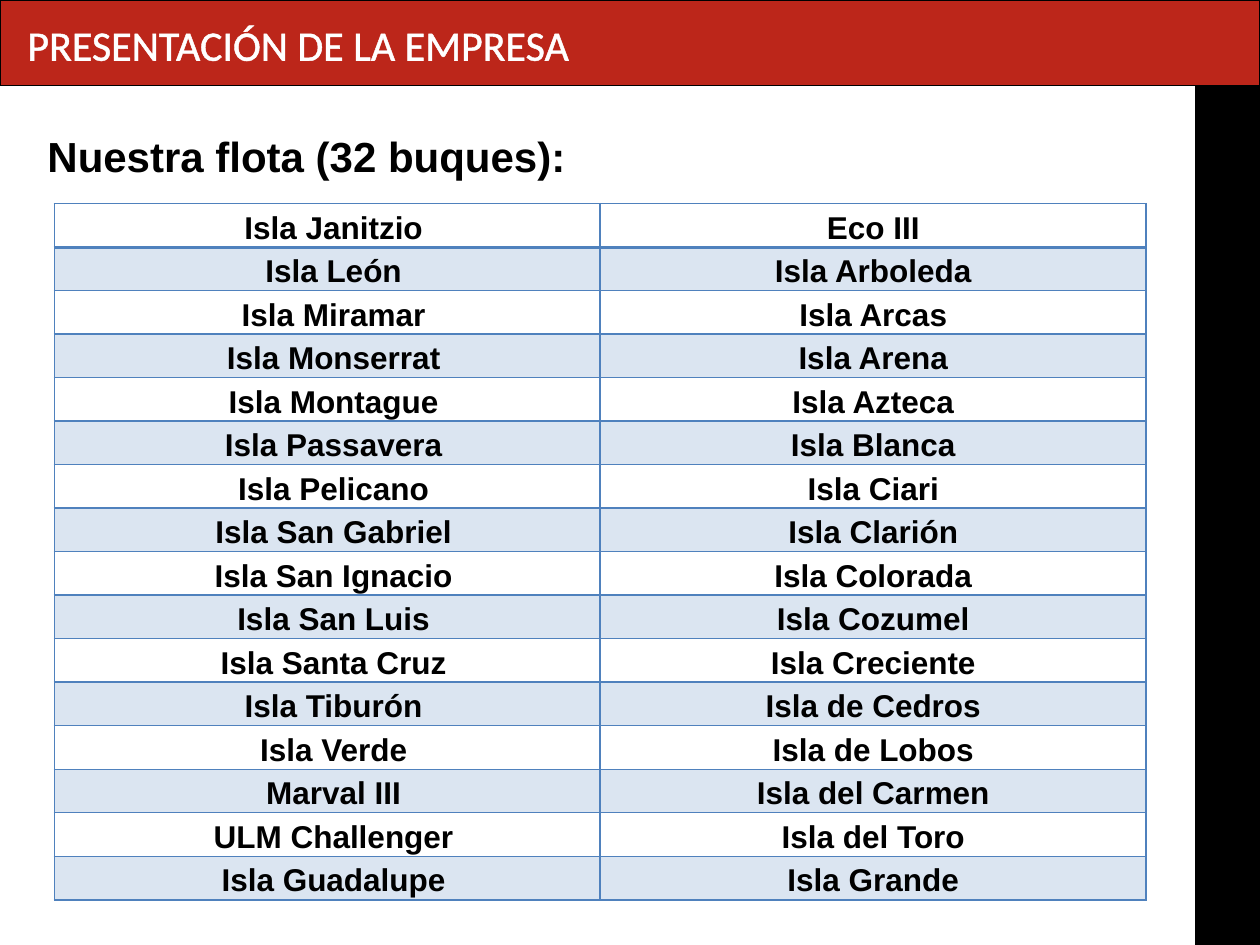
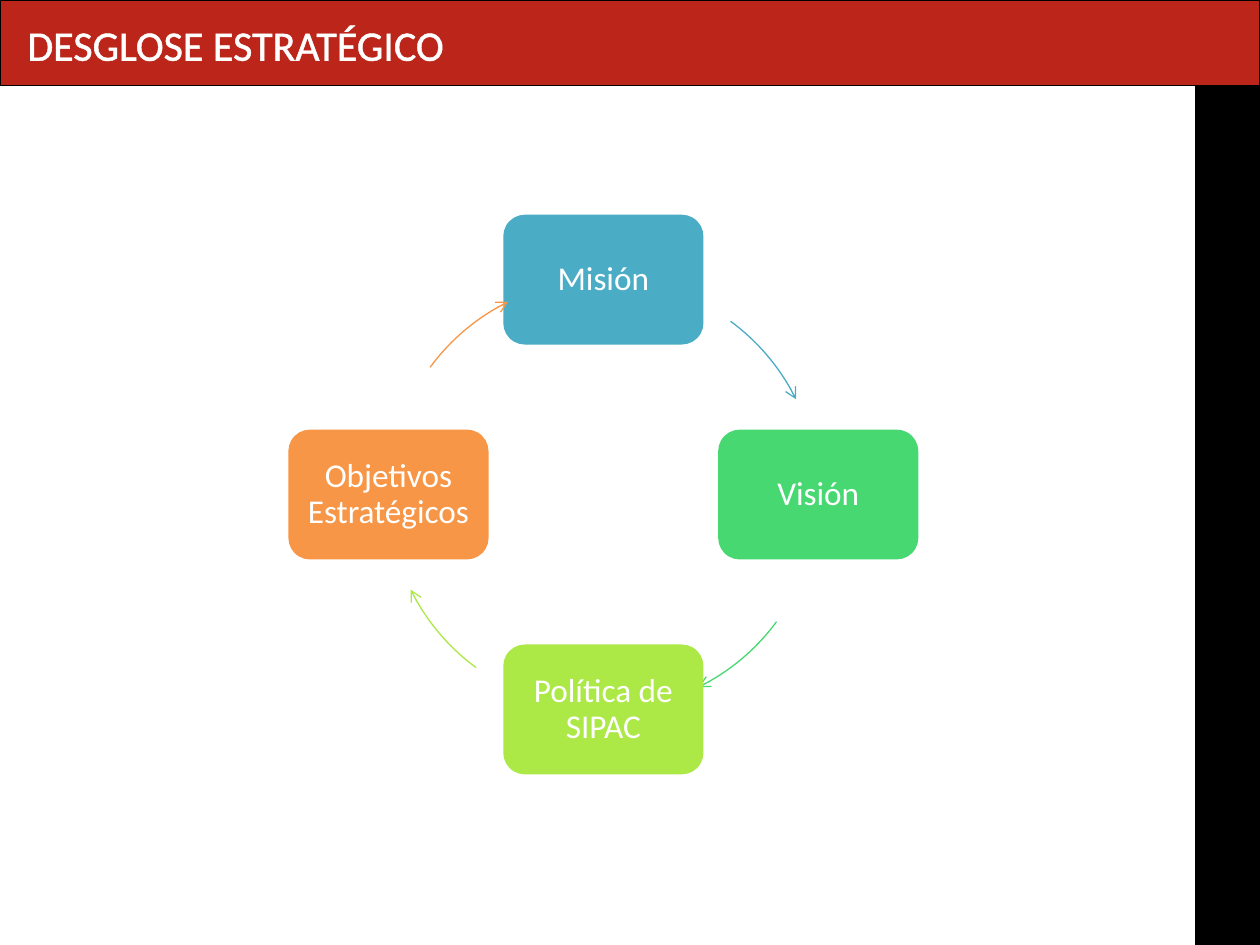
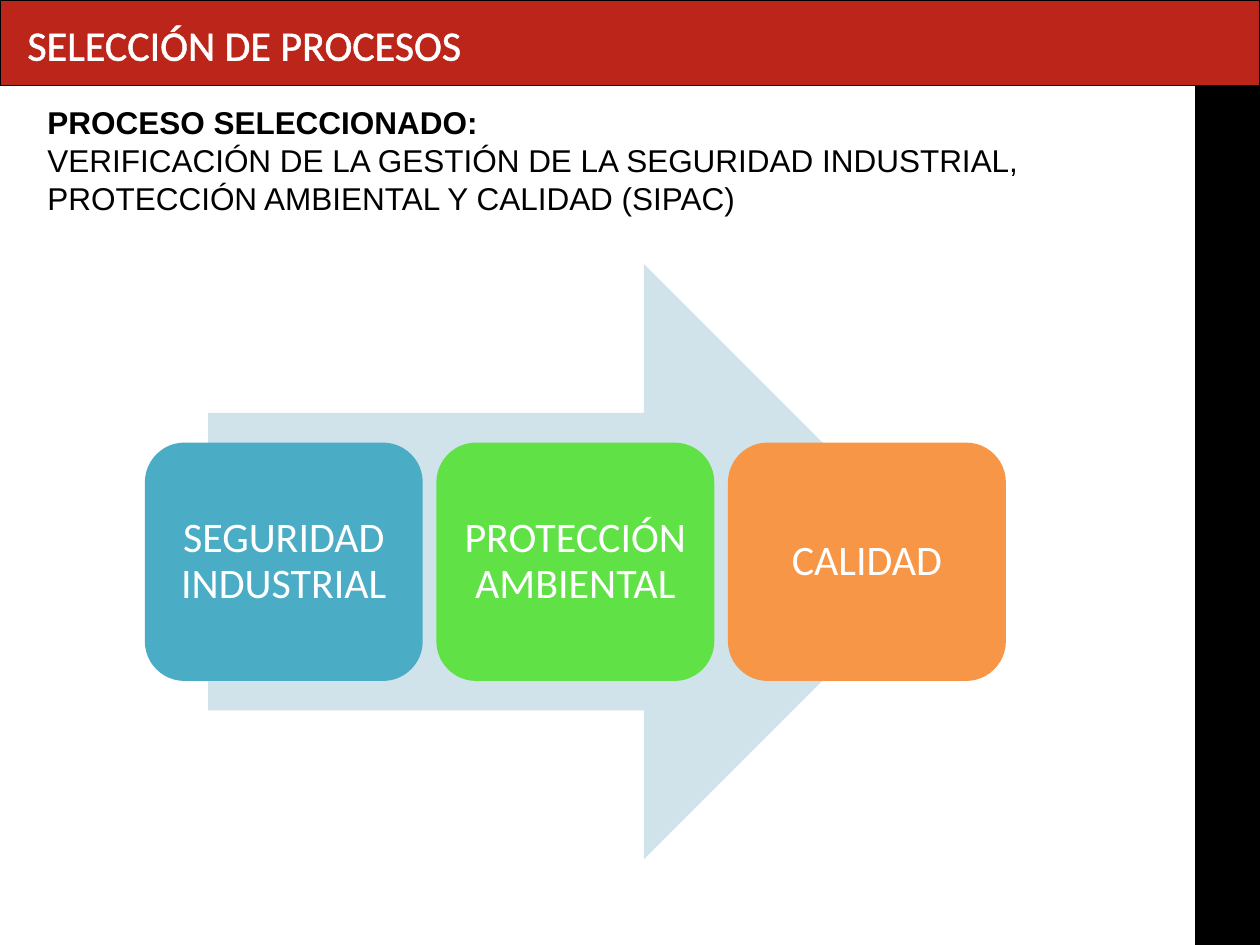
from dataclasses import dataclass
from math import cos, radians, sin

from lxml import etree
from pptx import Presentation
from pptx.dml.color import RGBColor
from pptx.enum.shapes import MSO_SHAPE
from pptx.enum.text import MSO_ANCHOR, MSO_AUTO_SIZE, PP_ALIGN
from pptx.oxml.ns import qn
from pptx.util import Pt

RECT = MSO_SHAPE.RECTANGLE
ROUND_RECT = MSO_SHAPE.ROUNDED_RECTANGLE
RIGHT_ARROW = MSO_SHAPE.RIGHT_ARROW
ARC = MSO_SHAPE.ARC
CENTER = PP_ALIGN.CENTER
MIDDLE = MSO_ANCHOR.MIDDLE
FIT_SHAPE = MSO_AUTO_SIZE.SHAPE_TO_FIT_TEXT


@dataclass(frozen=True)
class Theme:
    black: str = "000000"
    white: str = "FFFFFF"
    red: str = "BC261A"
    blue: str = "4F81BD"
    teal: str = "4BACC6"
    green: str = "47D872"
    lime: str = "ACE946"
    bright_green: str = "60E146"
    orange: str = "F79646"
    pale_blue: str = "D0E3EA"
    heading_font: str = "Calibri"
    body_font: str = "Arial"
    title_size: float = 24
    body_size: float = 18
    node_size: float = 19


T = Theme()

FLEET = [
    ("Isla Janitzio", "Eco III"),
    ("Isla León", "Isla Arboleda"),
    ("Isla Miramar", "Isla Arcas"),
    ("Isla Monserrat", "Isla Arena"),
    ("Isla Montague", "Isla Azteca"),
    ("Isla Passavera", "Isla Blanca"),
    ("Isla Pelicano", "Isla Ciari"),
    ("Isla San Gabriel", "Isla Clarión"),
    ("Isla San Ignacio", "Isla Colorada"),
    ("Isla San Luis", "Isla Cozumel"),
    ("Isla Santa Cruz", "Isla Creciente"),
    ("Isla Tiburón", "Isla de Cedros"),
    ("Isla Verde", "Isla de Lobos"),
    ("Marval III", "Isla del Carmen"),
    ("ULM Challenger", "Isla del Toro"),
    ("Isla Guadalupe", "Isla Grande"),
]

STRATEGY = [
    ("Misión", T.teal),
    ("Visión", T.green),
    ("Política de SIPAC", T.lime),
    ("Objetivos Estratégicos", T.orange),
]

PROCESSES = [
    ("SEGURIDAD INDUSTRIAL", T.teal),
    ("PROTECCIÓN AMBIENTAL", T.bright_green),
    ("CALIDAD", T.orange),
]


def rgb(value):
    return RGBColor.from_string(value)


def style(p, font, size, color, bold=False):
    for r in p.runs:
        r.font.name = font
        r.font.size = Pt(size)
        r.font.bold = bold
        r.font.color.rgb = rgb(color)


def add_line_fill(ln, color):
    fill = etree.SubElement(ln, qn("a:solidFill"))
    etree.SubElement(fill, qn("a:srgbClr"), val=color)


def add_shape(s, kind, x, y, w, h, fill=None, line=None):
    sp = s.shapes.add_shape(kind, Pt(x), Pt(y), Pt(w), Pt(h))
    sp.shadow.inherit = False
    if fill:
        sp.fill.solid()
        sp.fill.fore_color.rgb = rgb(fill)
    else:
        sp.fill.background()
    if line:
        sp.line.color.rgb = rgb(line)
        sp.line.width = Pt(0.75)
    else:
        sp.line.fill.background()
    return sp


def add_text(s, x, y, w, h, lines, font, size, color, bold_first=False):
    tf = s.shapes.add_textbox(Pt(x), Pt(y), Pt(w), Pt(h)).text_frame
    tf.word_wrap = True
    tf.auto_size = FIT_SHAPE
    tf.text = "\n".join(lines)
    for i, p in enumerate(tf.paragraphs):
        style(p, font, size, color, bold_first and i == 0)
    return tf


def add_node(s, x, y, w, h, text, fill, size, margin):
    tf = add_shape(s, ROUND_RECT, x, y, w, h, fill).text_frame
    tf.word_wrap = True
    tf.vertical_anchor = MIDDLE
    tf.margin_left = tf.margin_right = Pt(margin)
    tf.margin_top = tf.margin_bottom = Pt(margin)
    tf.text = text
    p = tf.paragraphs[0]
    p.alignment = CENTER
    p.line_spacing = 0.9
    style(p, T.heading_font, size, T.white)


def add_arc_arrow(s, cx, cy, radius, start, end, color):
    sp = add_shape(s, ARC, cx - radius, cy - radius, 2 * radius, 2 * radius, line=color)
    for i, angle in enumerate((start, end)):
        sp.adjustments[i] = angle % 360 * 0.6
    etree.SubElement(sp.line._get_or_add_ln(), qn("a:tailEnd"), type="arrow")


def add_framed_slide(prs, title):
    s = prs.slides.add_slide(prs.slide_layouts[6])
    add_shape(s, RECT, 683, 49, 37, 491, T.black, T.black)
    add_shape(s, RECT, 0, 0, 720, 49, T.red, T.black)
    tf = add_text(s, 8.6, 7.2, 385, 36, [title], T.heading_font, T.title_size, T.white)
    r_pr = tf.paragraphs[0].runs[0].font._element
    ln = etree.Element(qn("a:ln"), w=str(Pt(1.45)))
    add_line_fill(ln, T.white)
    r_pr.insert(0, ln)
    return s


def set_borders(cell, bottom_widths):
    tc_pr = cell._tc.get_or_add_tcPr()
    widths = {"L": 1, "R": 1, **bottom_widths}
    for i, (side, width) in enumerate(widths.items()):
        ln = etree.Element(qn(f"a:ln{side}"), w=str(Pt(width)))
        add_line_fill(ln, T.blue)
        tc_pr.insert(i, ln)


def set_band(cell, shaded):
    if not shaded:
        cell.fill.background()
        return
    cell.fill.solid()
    cell.fill.fore_color.rgb = rgb(T.blue)
    color = cell._tc.tcPr.find(f".//{qn('a:srgbClr')}")
    etree.SubElement(color, qn("a:alpha"), val="20000")


def add_fleet_table(s, rows, x, y, w, row_h):
    frame = s.shapes.add_table(len(rows), 2, Pt(x), Pt(y), Pt(w), Pt(row_h * len(rows)))
    table = frame.table
    table.first_row = table.horz_banding = False
    for i, names in enumerate(rows):
        table.rows[i].height = Pt(row_h)
        for j, name in enumerate(names):
            cell = table.cell(i, j)
            cell.text = name
            cell.vertical_anchor = MIDDLE
            cell.margin_left = Pt(7.2 if j == 0 else 0)
            cell.margin_right = cell.margin_top = cell.margin_bottom = 0
            p = cell.text_frame.paragraphs[0]
            p.alignment = CENTER
            p.line_spacing = 1.15
            style(p, T.body_font, T.body_size, T.black, True)
            set_band(cell, i % 2 == 1)
            set_borders(cell, {"T": 2 if i == 1 else 1, "B": 2 if i == 0 else 1})


def add_cycle(s, nodes, cx, cy, radius, w, h):
    step = 360 / len(nodes)
    for i, (text, color) in enumerate(nodes):
        angle = i * step - 90
        x = cx + radius * cos(radians(angle))
        y = cy + radius * sin(radians(angle))
        add_node(s, x - w / 2, y - h / 2, w, h, text, color, T.node_size, 5.8)
        add_arc_arrow(s, cx, cy, radius, angle + 36.3, angle + 63.7, color)


def add_process_arrow(s, steps, x, y, w, h, pitch):
    add_shape(s, RIGHT_ARROW, 119, 151, 419, 340, T.pale_blue)
    for i, (text, color) in enumerate(steps):
        add_node(s, x + i * pitch, y, w, h, text, color, T.title_size, 7.2)


def main():
    prs = Presentation()
    prs.slide_width, prs.slide_height = Pt(720), Pt(540)

    s = add_framed_slide(prs, "PRESENTACIÓN DE LA EMPRESA")
    add_text(s, 20, 71.3, 635, 94, ["Nuestra flota (32 buques):"],
             T.body_font, T.title_size, T.black, True)
    add_fleet_table(s, FLEET, 31, 116.4, 624, 24.85)

    s = add_framed_slide(prs, "DESGLOSE ESTRATÉGICO")
    add_cycle(s, STRATEGY, 344.8, 282.6, 122.8, 114.4, 74.2)

    s = add_framed_slide(prs, "SELECCIÓN DE PROCESOS")
    add_process_arrow(s, PROCESSES, 82.8, 252.9, 158.8, 136.2, 166.6)
    add_text(s, 20, 55.4, 635, 73,
             ["PROCESO SELECCIONADO:",
              "VERIFICACIÓN DE LA GESTIÓN DE LA SEGURIDAD INDUSTRIAL, "
              "PROTECCIÓN AMBIENTAL Y CALIDAD (SIPAC)"],
             T.body_font, T.body_size, T.black, True)

    prs.save("out.pptx")


if __name__ == "__main__":
    main()
